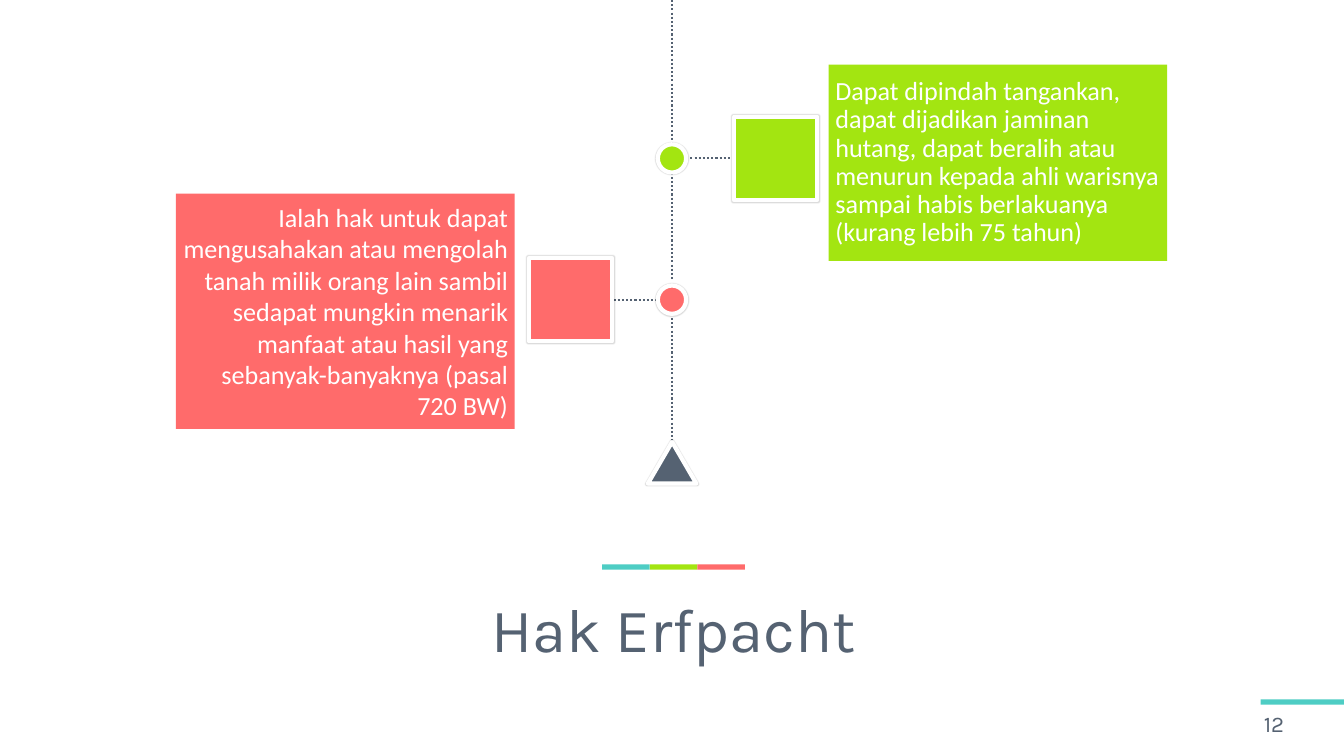
from dataclasses import dataclass

from lxml import etree
from pptx import Presentation
from pptx.dml.color import RGBColor
from pptx.enum.dml import MSO_LINE
from pptx.enum.shapes import MSO_CONNECTOR, MSO_SHAPE
from pptx.enum.text import MSO_ANCHOR, MSO_AUTO_SIZE, PP_ALIGN
from pptx.oxml import parse_xml
from pptx.oxml.ns import nsdecls, qn
from pptx.util import Cm, Pt

RECT, OVAL, TRIANGLE = MSO_SHAPE.RECTANGLE, MSO_SHAPE.OVAL, MSO_SHAPE.ISOSCELES_TRIANGLE
LEFT, CENTER, RIGHT = PP_ALIGN.LEFT, PP_ALIGN.CENTER, PP_ALIGN.RIGHT
TOP, MIDDLE = MSO_ANCHOR.TOP, MSO_ANCHOR.MIDDLE


@dataclass(frozen=True)
class Theme:
    slate: RGBColor = RGBColor.from_string("556272")
    teal: RGBColor = RGBColor.from_string("4ECDC4")
    lime: RGBColor = RGBColor.from_string("A3E511")
    coral: RGBColor = RGBColor.from_string("FF6B6B")
    white: RGBColor = RGBColor.from_string("FFFFFF")
    heading: str = "Karla"
    body: str = "Calibri"
    title_size: Pt = Pt(66)
    body_size: Pt = Pt(28)
    number_size: Pt = Pt(24)


T = Theme()
SHADOW = (
    f'<a:effectLst {nsdecls("a")}><a:outerShdw blurRad="12700" dist="0" sx="101000" sy="101000" '
    'algn="ctr" rotWithShape="0"><a:srgbClr val="000000"><a:alpha val="15000"/></a:srgbClr>'
    '</a:outerShdw></a:effectLst>'
)


def add_block(kind, x, y, w, h, color, framed=False):
    """Add a filled shape; a framed one has a white border and a faint shadow."""
    sp = s.shapes.add_shape(kind, Cm(x), Cm(y), Cm(w), Cm(h))
    sp.fill.solid()
    sp.fill.fore_color.rgb = color
    sp.shadow.inherit = False
    if framed:
        sp.line.color.rgb = T.white
        sp.line.width = Pt(4.5)
        effects = sp._element.spPr.find(qn("a:effectLst"))
        effects.getparent().replace(effects, parse_xml(SHADOW))
    else:
        sp.line.fill.background()


def write(sp, box, text, font, size, color, align, anchor, spacing=1.0, before=0):
    """Place a text shape and fill it with one formatted paragraph."""
    sp.left, sp.top, sp.width, sp.height = [Cm(v) for v in box]
    tf = sp.text_frame
    tf.text = text
    tf.word_wrap = True
    tf.auto_size = MSO_AUTO_SIZE.NONE
    tf.vertical_anchor = anchor
    p = tf.paragraphs[0]
    p.alignment = align
    p.line_spacing = spacing
    p.space_before = Pt(before)
    pPr = p._p.get_or_add_pPr()
    pPr.set("marL", "0")
    pPr.set("indent", "0")
    etree.SubElement(pPr, qn("a:buNone"))
    f = p.runs[0].font
    f.name, f.size, f.color.rgb = font, size, color


prs = Presentation()
prs.slide_width, prs.slide_height = Cm(50.8), Cm(28.58)
s = prs.slides.add_slide(prs.slide_layouts[3])
title, right_body, left_body = s.placeholders

# Timeline: dotted axis with one branch to each side
AXIS, DOT, SQUARE = 25.4, 1.07, 3.15
UPPER, LOWER, TIP = 5.99, 11.33, 16.71
lines = [
    (AXIS, 0, AXIS, UPPER - DOT / 2),
    (AXIS, UPPER + DOT / 2, AXIS, LOWER - 0.7),
    (AXIS, LOWER + DOT / 2, AXIS, TIP),
    (AXIS + DOT / 2, UPPER, 27.69, UPPER),
    (23.19, LOWER, AXIS - DOT / 2, LOWER),
]
for ends in lines:
    c = s.shapes.add_connector(MSO_CONNECTOR.STRAIGHT, *[Cm(v) for v in ends])
    c.line.color.rgb = T.slate
    c.line.width = Pt(2.25)
    c.line.dash_style = MSO_LINE.ROUND_DOT
    etree.SubElement(c._element.spPr, qn("a:effectLst"))

for y, square_x, color in [(UPPER, 27.74, T.lime), (LOWER, 19.99, T.coral)]:
    add_block(RECT, square_x, y - SQUARE / 2, SQUARE, SQUARE, color, framed=True)
    add_block(OVAL, AXIS - DOT / 2, y - DOT / 2, DOT, DOT, color, framed=True)
add_block(TRIANGLE, AXIS - 0.91, TIP, 1.83, 1.57, T.slate, framed=True)

# Branch texts
branches = [
    (right_body, (31.32, 2.44, 12.8, 7.42), T.lime, LEFT, 0.9,
     "Dapat dipindah tangankan, dapat dijadikan jaminan hutang, dapat beralih atau "
     "menurun kepada ahli warisnya sampai habis berlakuanya (kurang lebih 75 tahun)"),
    (left_body, (6.65, 7.32, 12.8, 8.89), T.coral, RIGHT, 1.0,
     "Ialah hak untuk dapat mengusahakan atau mengolah tanah milik orang lain sambil "
     "sedapat mungkin menarik manfaat atau hasil yang sebanyak-banyaknya (pasal 720 BW)"),
]
for sp, box, color, align, spacing, text in branches:
    sp.fill.solid()
    sp.fill.fore_color.rgb = color
    write(sp, box, text, T.body, T.body_size, T.white, align, MIDDLE, spacing)

# Title under a three-colour stripe
for i, color in enumerate([T.teal, T.lime, T.coral]):
    add_block(RECT, 22.76 + 1.8 * i, 21.34, 1.8, 0.2, color)
write(title, (13.59, 21.36, 23.75, 3.96), "Hak Erfpacht", T.heading, T.title_size,
      T.slate, CENTER, TOP, 1.3, 12)

# Page number
add_block(RECT, 47.65, 26.44, 3.15, 0.2, T.teal)
number = s.shapes.add_textbox(0, 0, 0, 0)
write(number, (47.52, 26.67, 3.28, 1.35), "12", T.heading, T.number_size, T.slate, LEFT, MIDDLE)

prs.save("out.pptx")
